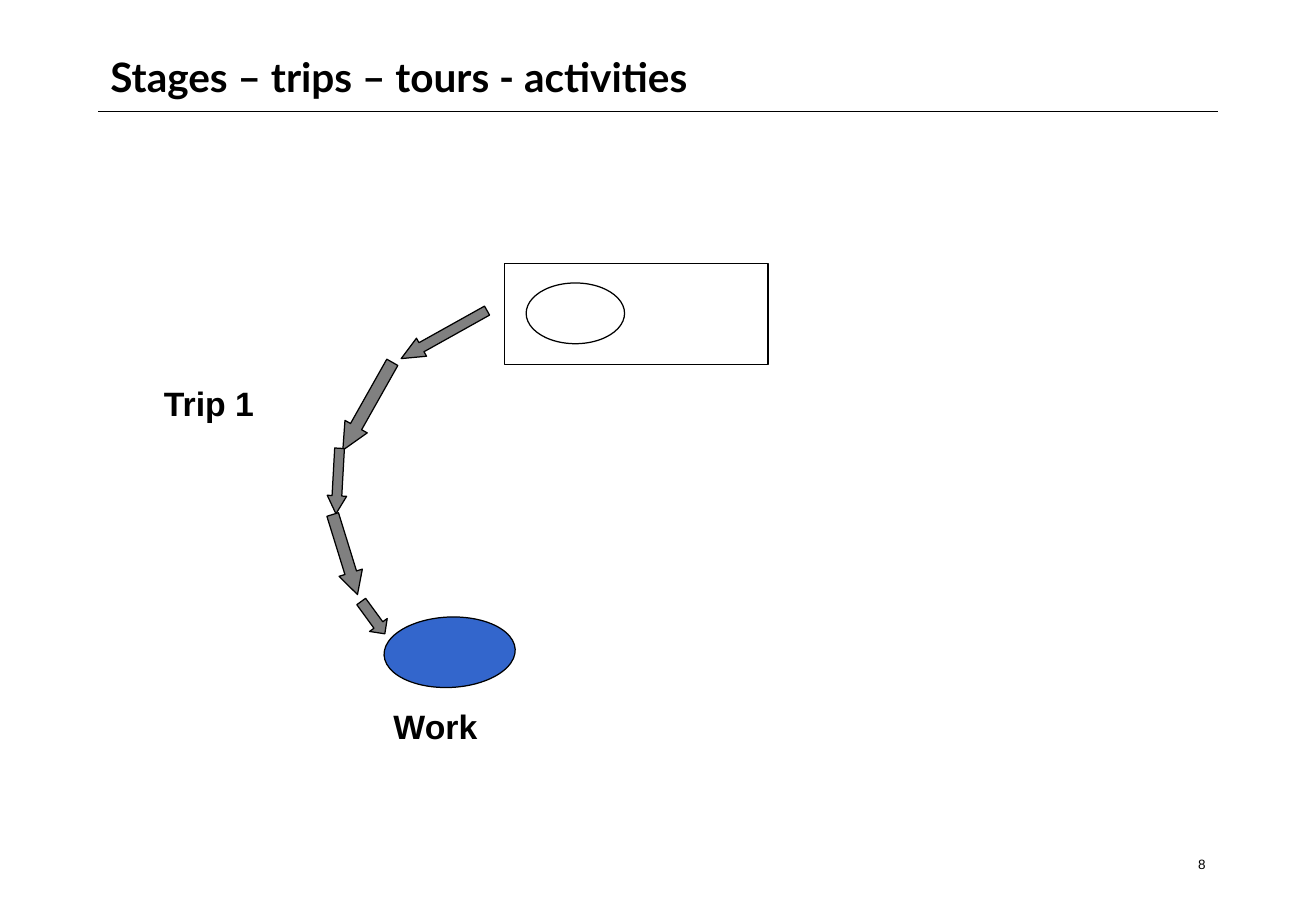
from pptx import Presentation
from pptx import util as u
from pptx.dml.color import RGBColor
from pptx.enum import shapes, text
from pptx.oxml.ns import qn
from lxml import etree

BLACK = RGBColor(0x00, 0x00, 0x00)
WHITE = RGBColor(0xFF, 0xFF, 0xFF)
GRAY = RGBColor(0x80, 0x80, 0x80)
BLUE = RGBColor(0x33, 0x66, 0xCC)
SHAPE = shapes.MSO_SHAPE
LEFT, DOWN = SHAPE.LEFT_ARROW, SHAPE.DOWN_ARROW

# Offsets from the diagram's top left corner: kind, box, rotation, head length ratio
STAGES = [
    (LEFT, (2, 0.5, 0.81, 0.17), 330.8, 1.13),
    (DOWN, (1.67, 0.76, 0.21, 0.83), 29.4, 1.06),
    (LEFT, (1.26, 1.71, 0.54, 0.16), 273.2, 0.93),
    (DOWN, (1.49, 2.05, 0.2, 0.69), 342.8, 0.94),
    (DOWN, (1.73, 2.75, 0.18, 0.33), 323.8, 0.5),
]


def add_label(slide, box, words, size, font="Arial", bold=True, wrap=False,
              align=text.PP_ALIGN.LEFT, anchor=text.MSO_ANCHOR.TOP):
    tf = slide.shapes.add_textbox(*map(u.Inches, box)).text_frame
    tf.word_wrap = wrap
    tf.vertical_anchor = anchor
    p = tf.paragraphs[0]
    p.text = words
    p.alignment = align
    p.font.name, p.font.size, p.font.bold = font, u.Pt(size), bold
    p.font.color.rgb = BLACK


def add_outlined(slide, kind, box, fill, rotation=0):
    sp = slide.shapes.add_shape(kind, *map(u.Inches, box))
    sp.shadow.inherit = False
    sp.rotation = rotation
    sp.fill.solid()
    sp.fill.fore_color.rgb = fill
    sp.line.color.rgb = BLACK
    sp.line.width = u.Pt(0.75)
    return sp


def add_header(slide, left, top, width, height):
    """Title with a rule along its lower edge."""
    add_label(slide, (left, top, width, height), "Stages – trips – tours - activities",
              24, "Lato", wrap=True, anchor=text.MSO_ANCHOR.MIDDLE)
    y = u.Inches(top + height)
    rule = slide.shapes.add_connector(shapes.MSO_CONNECTOR.STRAIGHT,
                                      u.Inches(left), y, u.Inches(left + width), y)
    rule.line.color.rgb = BLACK
    rule.line.width = u.Pt(0.75)
    etree.SubElement(rule.element.spPr, qn("a:effectLst"))


def add_trip_diagram(slide, left, top):
    """Chain of stage arrows leading from the home box to work."""
    def at(x, y, width, height):
        return left + x, top + y, width, height

    for kind, box, rotation, head in STAGES:
        arrow = add_outlined(slide, kind, at(*box), GRAY, rotation)
        arrow.adjustments[0] = 0.5
        arrow.adjustments[1] = head
    add_outlined(slide, SHAPE.OVAL, at(1.91, 2.91, 1.08, 0.58), BLUE, 357.5)
    add_outlined(slide, SHAPE.RECTANGLE, at(2.9, 0, 2.17, 0.83), WHITE)
    add_outlined(slide, SHAPE.OVAL, at(3.08, 0.16, 0.81, 0.5), WHITE)
    add_label(slide, at(1.89, 3.59, 0.9, 0.44), "Work", 20)
    add_label(slide, at(0, 0.93, 0.95, 0.44), "Trip 1", 20)


def main():
    prs = Presentation()
    prs.slide_width, prs.slide_height = u.Inches(10.83), u.Inches(7.5)
    slide = prs.slides.add_slide(prs.slide_layouts[6])
    add_header(slide, 0.81, 0.33, 9.21, 0.59)
    add_trip_diagram(slide, 1.25, 2.17)
    add_label(slide, (7.76, 7, 2.26, 0.33), "8", 8, bold=False, wrap=True,
              align=text.PP_ALIGN.RIGHT)
    prs.save("out.pptx")


if __name__ == "__main__":
    main()
